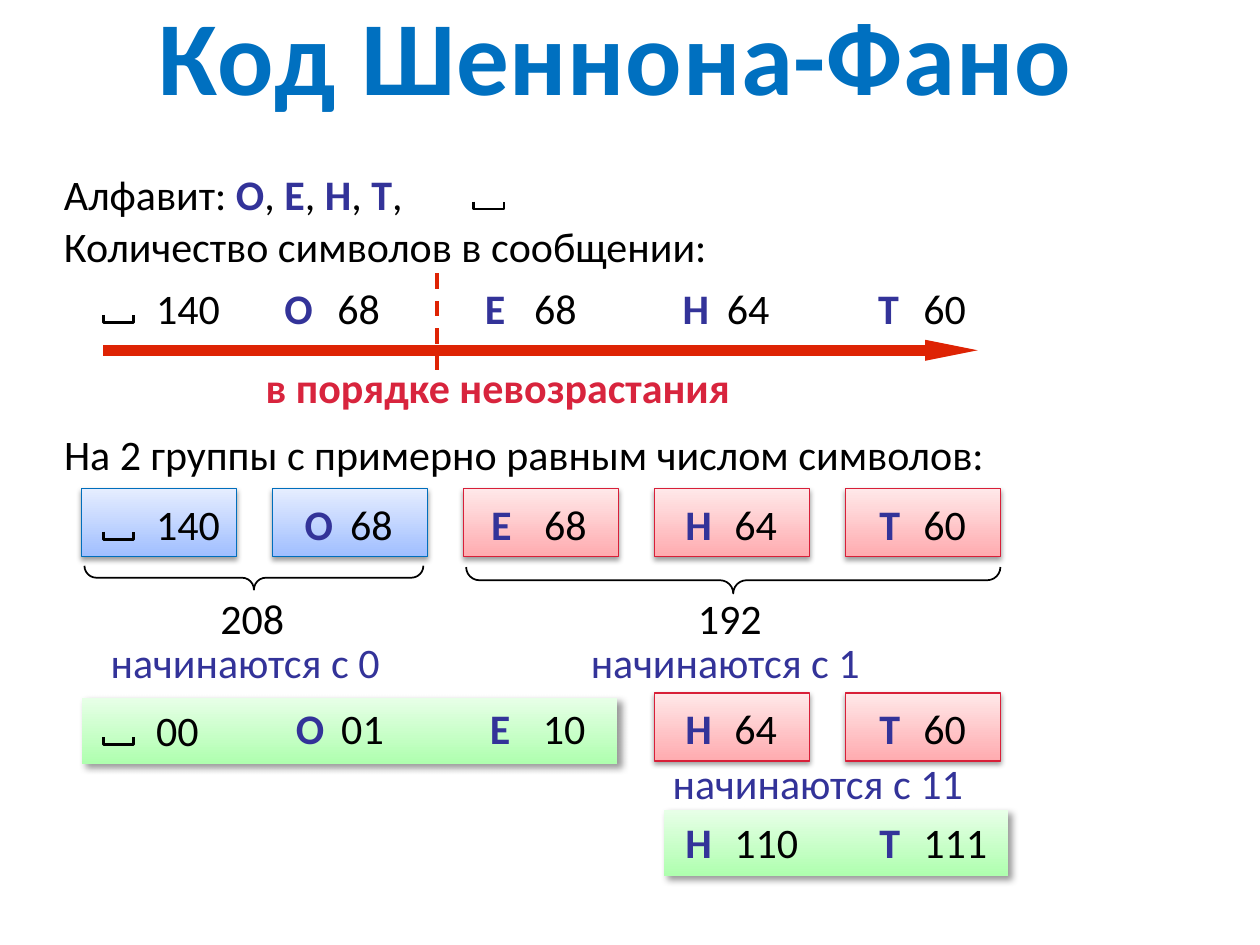
"""Build the slide that explains Shannon-Fano coding with letter counts."""
from lxml import etree
from pptx import Presentation
from pptx.dml.color import RGBColor
from pptx.enum.dml import MSO_LINE
from pptx.enum.shapes import MSO_CONNECTOR, MSO_SHAPE
from pptx.enum.text import MSO_ANCHOR, MSO_AUTO_SIZE, PP_ALIGN
from pptx.oxml.ns import qn
from pptx.util import Inches, Pt

RECT, BRACE = MSO_SHAPE.RECTANGLE, MSO_SHAPE.LEFT_BRACE
STRAIGHT, DASH = MSO_CONNECTOR.STRAIGHT, MSO_LINE.DASH
CENTER, MIDDLE = PP_ALIGN.CENTER, MSO_ANCHOR.MIDDLE
LEFT = PP_ALIGN.LEFT
FIT = MSO_AUTO_SIZE.SHAPE_TO_FIT_TEXT

BLACK = RGBColor(0x00, 0x00, 0x00)
INDIGO = RGBColor(0x33, 0x33, 0x99)
TITLE_BLUE = RGBColor(0x00, 0x70, 0xC0)
RED = RGBColor(0xDE, 0x23, 0x04)
CRIMSON = RGBColor(0xD8, 0x24, 0x3D)
GREEN_FILL = RGBColor(0xAF, 0xFF, 0xAF), RGBColor(0xE7, 0xFF, 0xE7)
BLUE_FILL = RGBColor(0xA0, 0xBE, 0xFF), RGBColor(0xE5, 0xED, 0xFF)
BLUE_LINE = RGBColor(0x00, 0x6E, 0xBC)
PINK_FILL = RGBColor(0xFF, 0xAB, 0xAF), RGBColor(0xFF, 0xE8, 0xE9)
PINK_LINE = RGBColor(0xD8, 0x1F, 0x38)
FONT = "Calibri"

TITLE = "Код Шеннона-Фано"
ALPHABET = ["О", "Е", "Н", "Т"]
CAPTIONS = [
    ("Количество символов в сообщении:", 0.41, 1.70, 5.93, BLACK, False),
    ("в порядке невозрастания", 2.01, 2.82, 3.93, CRIMSON, True),
    ("На 2 группы с примерно равным числом символов:", 0.41, 3.35, 8.32, BLACK, False),
    ("208", 1.65, 4.65, 0.76, BLACK, False),
    ("192", 5.44, 4.65, 0.76, BLACK, False),
    ("начинаются с 0", 0.78, 5.00, 2.59, INDIGO, False),
    ("начинаются с 1", 4.59, 5.00, 2.59, INDIGO, False),
    ("начинаются с 11", 5.24, 5.96, 2.75, INDIGO, False),
]
ROWS = [
    (2.19, [("О", 2.16, "68", 2.58), ("Е", 3.75, "68", 4.14),
            ("Н", 5.32, "64", 5.67), ("Т", 6.87, "60", 7.23)]),
    (3.91, [("O", 2.32, "68", 2.68), ("E", 3.80, "68", 4.22),
            ("H", 5.34, "64", 5.73), ("T", 6.88, "60", 7.23)]),
    (5.53, [("O", 2.25, "01", 2.61), ("E", 3.79, "10", 4.21),
            ("Н", 5.34, "64", 5.73), ("T", 6.88, "60", 7.23)]),
    (6.43, [("Н", 5.34, "110", 5.73), ("Т", 6.88, "111", 7.23)]),
]
LETTER_W = {"О": 0.46, "O": 0.46, "Е": 0.43, "E": 0.43,
            "Н": 0.45, "H": 0.45, "Т": 0.41, "T": 0.41}
SPACE_COUNTS = [("140", 2.19), ("140", 3.91), ("00", 5.54)]
SPACE_MARKS = [(3.76, 1.60), (0.82, 2.50), (0.82, 4.22), (0.82, 5.85)]
CODE_BARS = [(0.65, 5.54, 4.25), (5.27, 6.43, 2.73)]
BRACES = [(0.67, 4.49, 2.69, 0.19), (3.70, 4.50, 4.24, 0.21)]
BOX_LEFT, BOX_STEP, BOX_W, BOX_H = 0.65, 1.515, 1.23, 0.54
BOXES = [(0, 3.88), (1, 3.88), (2, 3.88), (3, 3.88), (4, 3.88), (3, 5.5), (4, 5.5)]


def number_width(text):
    return 0.2 + 0.19 * len(text)


def add_text(s, runs, x, y, w):
    tf = s.shapes.add_textbox(Inches(x), Inches(y), Inches(w), Inches(0.5)).text_frame
    tf.word_wrap = False
    tf.auto_size = FIT
    p = tf.paragraphs[0]
    p.alignment = LEFT
    p.font.size, p.font.name = Pt(24), FONT
    for text, color, bold in runs:
        r = p.add_run()
        r.text = text
        r.font.color.rgb, r.font.bold = color, bold


def add_effects(sp, shadow=None):
    effects = etree.SubElement(sp._element.spPr, qn("a:effectLst"))
    if shadow:
        alpha, blur, dist, angle = shadow
        outer = etree.SubElement(effects, qn("a:outerShdw"), blurRad=str(Pt(blur)),
                                 dist=str(Pt(dist)), dir=str(angle * 60000), rotWithShape="0")
        color = etree.SubElement(outer, qn("a:srgbClr"), val=str(BLACK))
        etree.SubElement(color, qn("a:alpha"), val=str(alpha * 1000))


def add_panel(s, x, y, w, h, colors, line, shadow):
    sp = s.shapes.add_shape(RECT, Inches(x), Inches(y), Inches(w), Inches(h))
    sp.fill.gradient()
    sp.fill.gradient_angle = 90
    for stop, color in zip(sp.fill.gradient_stops, colors):
        stop.color.rgb = color
    if line:
        sp.line.color.rgb, sp.line.width = line, Pt(0.75)
    else:
        sp.line.fill.background()
    add_effects(sp, shadow)


def add_outline(sp, width):
    sp.shadow.inherit = False
    sp.fill.background()
    sp.line.color.rgb, sp.line.width = BLACK, Pt(width)


def add_space_mark(s, x, y, w=0.24, h=0.06):
    fb = s.shapes.build_freeform(Inches(x), Inches(y))
    corners = [(x, y + h), (x + w, y + h), (x + w, y)]
    fb.add_line_segments([(Inches(a), Inches(b)) for a, b in corners], close=False)
    add_outline(fb.convert_to_shape(), 1.5)


def add_brace(s, x, y, w, h):
    left, top = x + (w - h) / 2, y - (w - h) / 2
    sp = s.shapes.add_shape(BRACE, Inches(left), Inches(top), Inches(h), Inches(w))
    sp.rotation = 270
    sp.adjustments[0], sp.adjustments[1] = 0.5, 0.5
    add_outline(sp, 1)


def add_line(s, x1, y1, x2, y2, width):
    line = s.shapes.add_connector(STRAIGHT, Inches(x1), Inches(y1), Inches(x2), Inches(y2))
    line.line.color.rgb, line.line.width = RED, Pt(width)
    add_effects(line)
    return line


def main():
    prs = Presentation()
    prs.slide_width, prs.slide_height = Inches(10), Inches(7.5)
    s = prs.slides.add_slide(prs.slide_layouts[5])

    title = s.shapes.title
    title.left, title.top, title.width, title.height = 0, 0, Inches(9.77), Inches(0.85)
    tf = title.text_frame
    tf.text, tf.vertical_anchor = TITLE, MIDDLE
    p = tf.paragraphs[0]
    p.alignment = CENTER
    p.font.size, p.font.name, p.font.bold = Pt(60), FONT, True
    p.font.color.rgb = TITLE_BLUE
    p.runs[0]._r.get_or_add_rPr().set("spc", "50")

    for x, y, w in CODE_BARS:
        add_panel(s, x, y, w, 0.52, GREEN_FILL, None, (40, 4, 3, 45))
    for column, y in BOXES:
        colors, line = (BLUE_FILL, BLUE_LINE) if column < 2 else (PINK_FILL, PINK_LINE)
        add_panel(s, BOX_LEFT + column * BOX_STEP, y, BOX_W, BOX_H, colors, line,
                  (38, 3.1, 1.6, 90))

    alphabet = [("Алфавит: ", BLACK, False)]
    for i, letter in enumerate(ALPHABET):
        comma = ", " if i < len(ALPHABET) - 1 else ","
        alphabet += [(letter, INDIGO, True), (comma, BLACK, False)]
    add_text(s, alphabet, 0.41, 1.29, 3.56)
    for text, x, y, w, color, bold in CAPTIONS:
        add_text(s, [(text, color, bold)], x, y, w)
    for y, cells in ROWS:
        for letter, letter_x, number, number_x in cells:
            add_text(s, [(letter, INDIGO, True)], letter_x, y, LETTER_W[letter])
            add_text(s, [(number, BLACK, False)], number_x, y, number_width(number))
    for number, y in SPACE_COUNTS:
        add_text(s, [(number, BLACK, False)], 1.14, y, number_width(number))

    for mark in SPACE_MARKS:
        add_space_mark(s, *mark)
    for brace in BRACES:
        add_brace(s, *brace)

    arrow = add_line(s, 0.82, 2.78, 7.76, 2.78, 6)
    etree.SubElement(arrow.line._get_or_add_ln(), qn("a:tailEnd"),
                     type="triangle", w="sm", len="lg")
    divider = add_line(s, 3.47, 2.17, 3.47, 2.94, 2.25)
    divider.line.dash_style = DASH

    prs.save("out.pptx")


if __name__ == "__main__":
    main()
